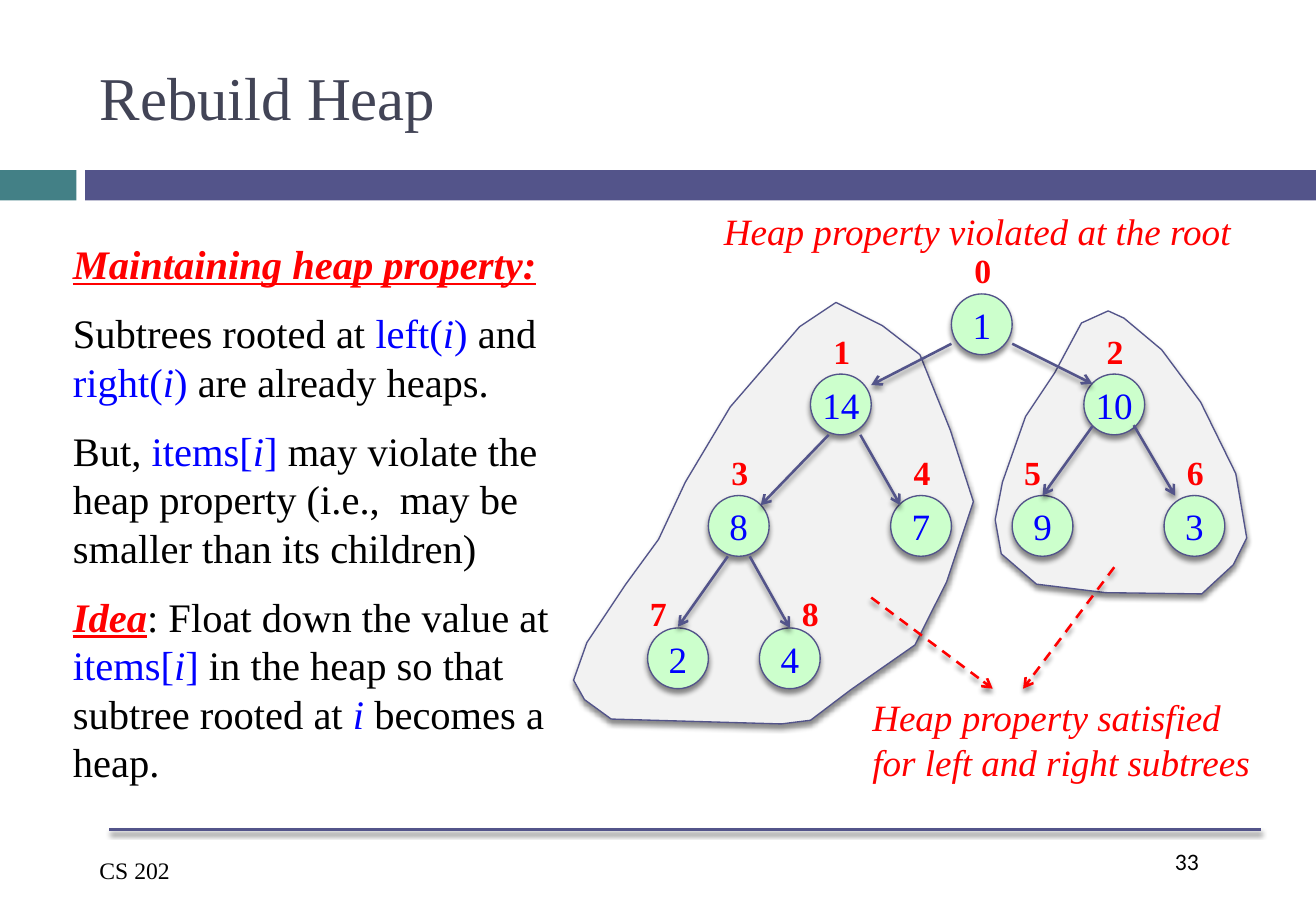
from pptx import Presentation
from pptx.dml.color import RGBColor
from pptx.enum.dml import MSO_LINE
from pptx.enum.shapes import MSO_CONNECTOR, MSO_SHAPE
from pptx.enum.text import MSO_ANCHOR, MSO_AUTO_SIZE, PP_ALIGN
from pptx.oxml import parse_xml
from pptx.oxml.ns import nsdecls, qn
from pptx.util import Pt

PX = 9144
RECT, OVAL = MSO_SHAPE.RECTANGLE, MSO_SHAPE.OVAL
STRAIGHT, DASH = MSO_CONNECTOR.STRAIGHT, MSO_LINE.DASH
TOP, MIDDLE, FIXED = MSO_ANCHOR.TOP, MSO_ANCHOR.MIDDLE, MSO_AUTO_SIZE.NONE
LEFT, CENTER = PP_ALIGN.LEFT, PP_ALIGN.CENTER

SERIF = "Times New Roman"
THEME = {
    "color": {
        "teal": "438086", "indigo": "53548A", "slate": "424456", "mint": "CCFFCC",
        "pale": "F2F2F2", "red": "FF0000", "blue": "0000FF", "black": "000000",
    },
    "type": {
        "title": ("slate", {"name": SERIF, "size": Pt(36)}),
        "head": ("red", {"name": SERIF, "size": Pt(24), "bold": True, "italic": True, "underline": True}),
        "text": ("black", {"name": SERIF, "size": Pt(24)}),
        "code": ("blue", {"name": SERIF, "size": Pt(24)}),
        "var": ("blue", {"name": SERIF, "size": Pt(24), "italic": True}),
        "node": ("blue", {"name": SERIF, "size": Pt(22)}),
        "index": ("red", {"name": SERIF, "size": Pt(20), "bold": True}),
        "note": ("red", {"name": SERIF, "size": Pt(22), "italic": True}),
        "foot": ("black", {"name": SERIF, "size": Pt(14)}),
        "page": ("black", {"name": "Calibri", "size": Pt(14)}),
    },
    "line": {"thin": Pt(0.79), "bold": Pt(1.5)},
}
COLOR = {key: RGBColor.from_string(value) for key, value in THEME["color"].items()}
LINE = THEME["line"]


def write(frame, paras, align=LEFT, gap=0, **form):
    for key, value in form.items():
        setattr(frame, key, value)
    for num, runs in enumerate(paras):
        para = frame.add_paragraph() if num else frame.paragraphs[0]
        para.alignment = align
        para.space_before = Pt(gap)
        for text, kind in runs:
            run = para.add_run()
            run.text = text
            tint, style = THEME["type"][kind]
            run.font.color.rgb = COLOR[tint]
            for key, value in style.items():
                setattr(run.font, key, value)


def finish(shape, tint, width, fill=None):
    shape.line.color.rgb = COLOR[tint]
    shape.line.width = width
    if fill:
        shape.fill.solid()
        shape.fill.fore_color.rgb = COLOR[fill]
    shape.element.spPr.append(parse_xml(
        f'<a:effectLst {nsdecls("a")}><a:outerShdw blurRad="38100" dist="30480" dir="5400000" '
        'rotWithShape="0"><a:srgbClr val="000000"><a:alpha val="45000"/></a:srgbClr>'
        '</a:outerShdw></a:effectLst>'))


deck = Presentation()
deck.slide_width, deck.slide_height = 1083 * PX, 750 * PX
slide = deck.slides.add_slide(deck.slide_layouts[1])
shapes = slide.shapes

for left, width, tint in [(0, 63, "teal"), (70, 1013, "indigo")]:
    bar = shapes.add_shape(RECT, left * PX, 140 * PX, width * PX, 25 * PX)
    bar.fill.solid()
    bar.fill.fore_color.rgb = COLOR[tint]
    bar.line.fill.background()
    bar.shadow.inherit = False

rule = shapes.add_connector(STRAIGHT, 90 * PX, 683 * PX, 1038 * PX, 683 * PX)
finish(rule, "indigo", LINE["bold"])

title, body = shapes.title, slide.placeholders[1]
for holder, box in [(title, (72, 25, 966, 108)), (body, (50, 192, 433, 475))]:
    for key, value in zip(("left", "top", "width", "height"), box):
        setattr(holder, key, value * PX)

write(title.text_frame, [[("Rebuild Heap", "title")]],
      vertical_anchor=MIDDLE, auto_size=FIXED, word_wrap=True)
write(body.text_frame, [
    [("Maintaining heap property:", "head")],
    [("Subtrees rooted at ", "text"), ("left(", "code"), ("i", "var"), (") ", "code"),
     ("and ", "text"), ("right(", "code"), ("i", "var"), (") ", "code"),
     ("are already heaps.", "text")],
    [("But, ", "text"), ("items[", "code"), ("i", "var"), ("]", "code"),
     (" may violate the heap property (i.e.,  may be smaller than its children)", "text")],
    [("Idea", "head"), (": Float down the value at ", "text"), ("items[", "code"),
     ("i", "var"), ("]", "code"), (" in the heap so that subtree rooted at ", "text"),
     ("i", "var"), (" becomes a heap.", "text")],
], gap=12, vertical_anchor=TOP, auto_size=FIXED, word_wrap=True)
for para in body.text_frame.paragraphs:
    props = para._p.get_or_add_pPr()
    props.set("marL", "0")
    props.set("indent", "0")
    props.append(parse_xml(f'<a:buNone {nsdecls("a")}/>'))

REGIONS = [
    [(912, 256), (890, 266), (868, 307), (844, 343), (825, 397), (819, 428), (824, 456),
     (853, 481), (910, 488), (989, 489), (1015, 465), (1026, 443), (1017, 390),
     (988, 331), (956, 288), (925, 262)],
    [(688, 249), (658, 269), (601, 335), (564, 397), (542, 444), (515, 481), (483, 529),
     (472, 560), (481, 576), (503, 592), (643, 596), (667, 593), (700, 568), (753, 531),
     (779, 479), (801, 413), (782, 354), (757, 292), (726, 268)],
]
for points in REGIONS:
    path = shapes.build_freeform(*points[0], scale=PX)
    path.add_line_segments(points[1:], close=True)
    finish(path.convert_to_shape(), "indigo", LINE["thin"], "pale")

ROWS = [242, 308, 408, 517]
NODES = [("1", 783), ("14", 667), ("10", 892), ("8", 583), ("7", 733),
         ("9", 833), ("3", 958), ("2", 533), ("4", 625)]
SHIFTS = {5: (0, -41), 7: (-8, -34), 8: (25, -34)}
EDGES = [
    (783, 283, 717, 317), (833, 283, 899, 316), (682, 358, 626, 416), (708, 358, 741, 416),
    (899, 351, 858, 408), (933, 350, 967, 408), (599, 458, 558, 516), (617, 458, 650, 517),
]
HINTS = [(717, 492, 817, 567), (917, 467, 842, 567)]
LABELS = [
    ((957, 692, 81, 50), ["33"], "page"),
    ((72, 700, 199, 34), ["CS 202"], "foot"),
    ((708, 567, 348, 84), ["Heap property satisfied", "for left and right subtrees"], "note"),
    ((586, 167, 453, 47), ["Heap property violated at the root"], "note"),
]

for index, (value, left) in enumerate(NODES):
    top = ROWS[(index + 1).bit_length() - 1]
    node = shapes.add_shape(OVAL, left * PX, top * PX, 50 * PX, 50 * PX)
    finish(node, "indigo", LINE["thin"], "mint")
    write(node.text_frame, [[(value, "node")]], CENTER, word_wrap=False,
          vertical_anchor=MIDDLE, margin_left=0, margin_right=0, margin_top=0, margin_bottom=0)
    right, down = SHIFTS.get(index, (9, -41))
    LABELS.append(((left + right, top + down, 34, 44), [str(index)], "index"))

for group, tint in [(EDGES, "indigo"), (HINTS, "red")]:
    for ends in group:
        arrow = shapes.add_connector(STRAIGHT, *[end * PX for end in ends])
        finish(arrow, tint, LINE["bold"])
        if group is HINTS:
            arrow.line.dash_style = DASH
        arrow.element.spPr.find(qn("a:ln")).append(
            parse_xml(f'<a:tailEnd {nsdecls("a")} type="arrow"/>'))

for box, lines, kind in LABELS:
    label = shapes.add_textbox(*[size * PX for size in box])
    write(label.text_frame, [[(line, kind)] for line in lines], word_wrap=False)

deck.save("out.pptx")
